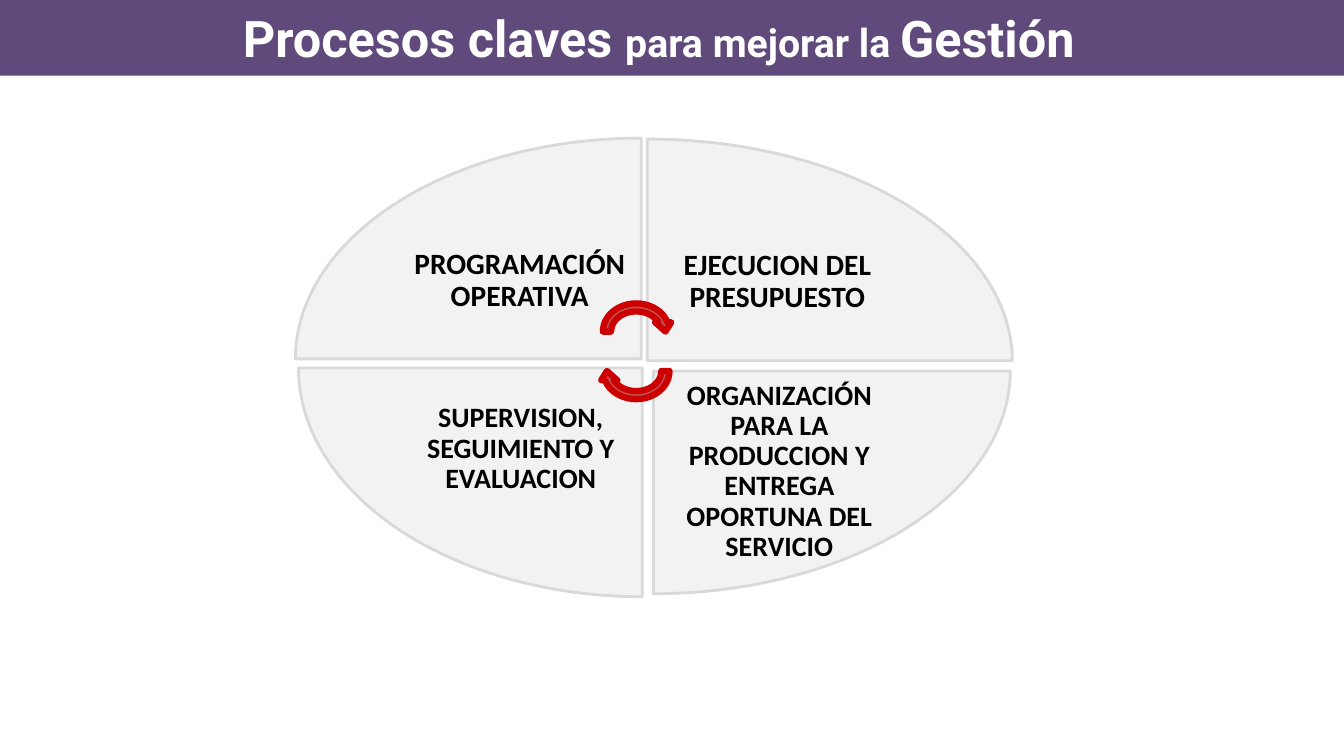
from dataclasses import dataclass

from pptx import Presentation
from pptx.dml.color import RGBColor
from pptx.enum.shapes import MSO_SHAPE
from pptx.enum.text import MSO_ANCHOR, PP_ALIGN
from pptx.util import Inches, Pt

WEDGE = MSO_SHAPE.PIE_WEDGE
ARROW = MSO_SHAPE.CIRCULAR_ARROW
BAR = MSO_SHAPE.RECTANGLE
CENTER = PP_ALIGN.CENTER
MIDDLE = MSO_ANCHOR.MIDDLE


@dataclass(frozen=True)
class Theme:
    bar: str = "604A7B"
    title_ink: str = "FFFFFF"
    wedge: str = "F2F2F2"
    wedge_edge: str = "D9D9D9"
    arrow: str = "C0504D"
    arrow_edge: str = "CC0000"
    ink: str = "000000"
    title_font: str = "Roboto"
    body_font: str = "Calibri"
    title_size: int = 36
    title_small: int = 28
    upper_size: int = 21
    lower_size: int = 20


class SlideBuilder:
    def __init__(self, page, theme):
        self.page = page
        self.theme = theme

    def shape(self, kind, at, fill, edge=None, edge_width=0, rotation=0):
        shape = self.page.shapes.add_shape(kind, *map(Inches, at))
        shape.shadow.inherit = False
        shape.rotation = rotation
        shape.fill.solid()
        shape.fill.fore_color.rgb = RGBColor.from_string(fill)
        if edge:
            shape.line.color.rgb = RGBColor.from_string(edge)
            shape.line.width = Pt(edge_width)
        else:
            shape.line.fill.background()
        return shape

    def set_text(self, box, spans, font, color, margins, **para_format):
        """Fill a box with one centred bold paragraph of (text, size) spans."""
        frame = box.text_frame
        left, top, right, bottom = map(Inches, margins)
        frame_format = {
            "word_wrap": True, "vertical_anchor": MIDDLE,
            "margin_left": left, "margin_top": top,
            "margin_right": right, "margin_bottom": bottom,
        }
        para = frame.paragraphs[0]
        for target, values in ((frame, frame_format),
                               (para, {"alignment": CENTER, **para_format})):
            for name, value in values.items():
                setattr(target, name, value)
        for text, size in spans:
            span = para.add_run()
            span.text = text
            for name, value in {"name": font, "size": Pt(size), "bold": True}.items():
                setattr(span.font, name, value)
            span.font.color.rgb = RGBColor.from_string(color)

    def title_bar(self, spans):
        theme = self.theme
        bar = self.shape(BAR, (0, 0, 13.33, 0.75), theme.bar)
        self.set_text(bar, spans, theme.title_font, theme.title_ink,
                      (0.1, 0.05, 0.36, 0.05))

    def wedge(self, at, rotation):
        theme = self.theme
        self.shape(WEDGE, at, theme.wedge, theme.wedge_edge, 2, rotation)

    def label(self, text, at, size):
        theme = self.theme
        box = self.page.shapes.add_textbox(*map(Inches, at))
        self.set_text(box, [(text, size)], theme.body_font, theme.ink, (0.16,) * 4,
                      line_spacing=0.9, space_after=Pt(7))

    def cycle_arrow(self, at, rotation):
        theme = self.theme
        self.shape(ARROW, at, theme.arrow, theme.arrow_edge, 4.5, rotation)


def main():
    theme = Theme()
    deck = Presentation()
    deck.slide_width, deck.slide_height = Inches(13.33), Inches(7.5)
    builder = SlideBuilder(deck.slides.add_slide(deck.slide_layouts[6]), theme)

    # Clockwise from the upper left: label, label box, type size, wedge frame
    processes = [
        ("PROGRAMACIÓN OPERATIVA", (3.94, 2.01, 2.43, 1.55),
         theme.upper_size, (2.93, 1.37, 3.43, 2.19)),
        ("EJECUCION DEL PRESUPUESTO", (6.43, 2.02, 2.56, 1.56),
         theme.upper_size, (7.13, 0.67, 2.2, 3.62)),
        ("ORGANIZACIÓN PARA LA PRODUCCION Y ENTREGA OPORTUNA DEL SERVICIO",
         (6.48, 3.9, 2.5, 1.56), theme.lower_size, (6.48, 3.68, 3.54, 2.21)),
        ("SUPERVISION, SEGUIMIENTO Y EVALUACION", (3.96, 3.65, 2.41, 1.61),
         theme.lower_size, (3.53, 3.08, 2.27, 3.41)),
    ]
    for turn, (text, label_at, size, wedge_at) in enumerate(processes):
        builder.wedge(wedge_at, 90 * turn)
        builder.label(text, label_at, size)

    for top, rotation in ((2.97, 0), (3.36, 180)):
        builder.cycle_arrow((5.94, top, 0.74, 0.64), rotation)

    builder.title_bar([
        ("Procesos claves ", theme.title_size),
        ("para mejorar la ", theme.title_small),
        ("Gestión", theme.title_size),
    ])
    deck.save("out.pptx")


if __name__ == "__main__":
    main()
